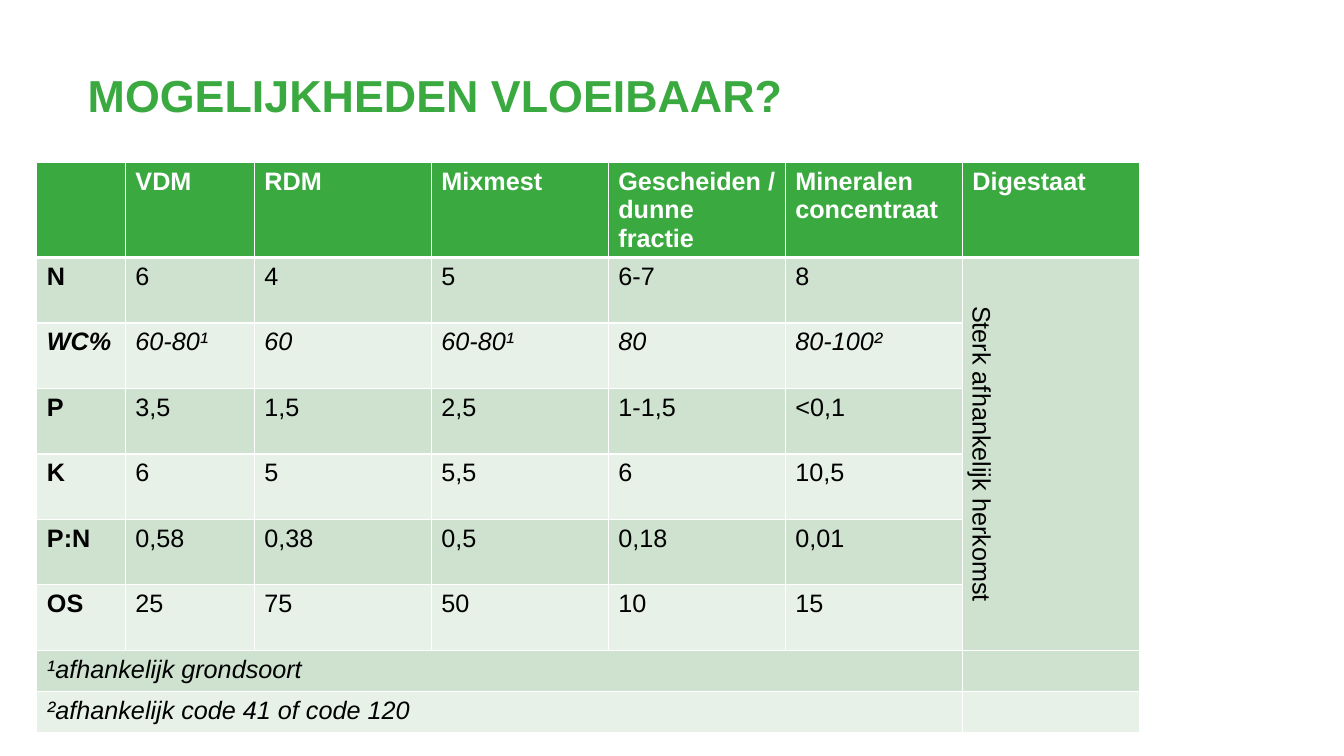
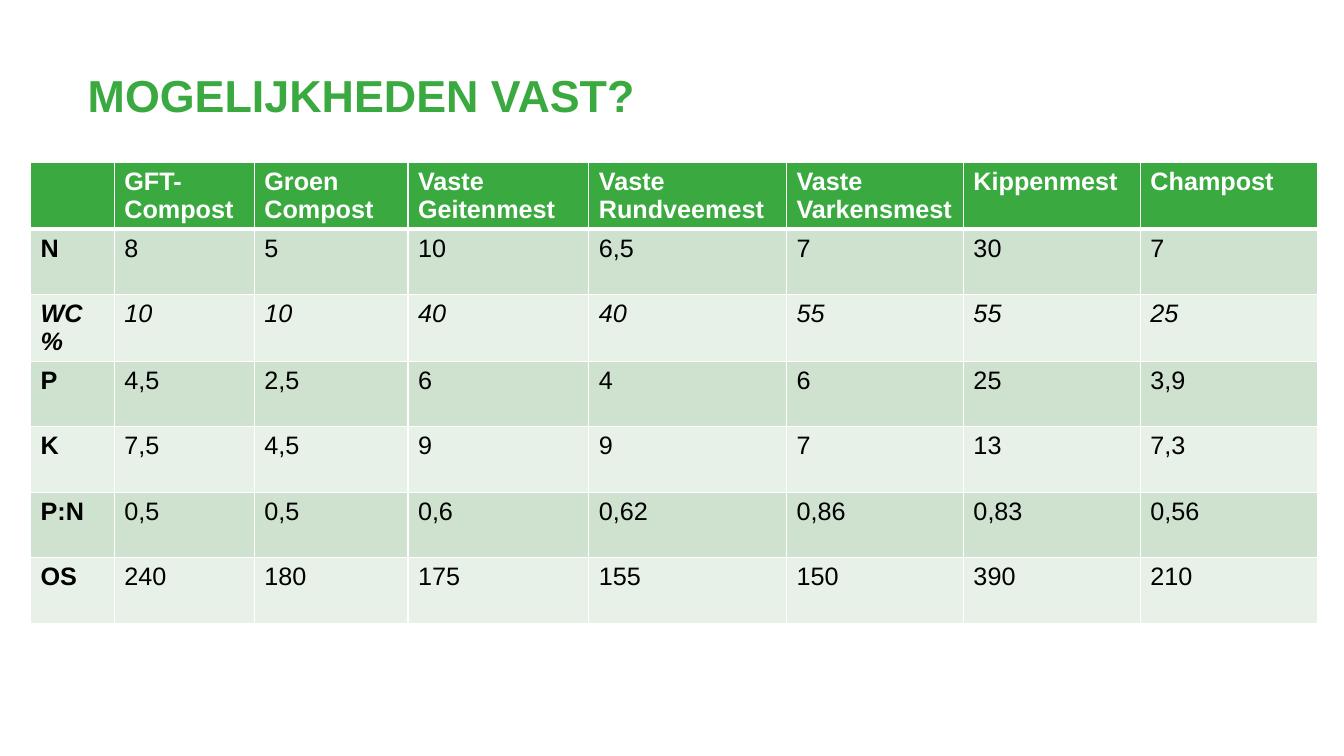
import pptx
import pptx.dml.color
import pptx.enum.text
import pptx.oxml
import pptx.oxml.ns
import pptx.util

Cm = pptx.util.Cm
Pt = pptx.util.Pt
ANCHOR = pptx.enum.text.MSO_ANCHOR
ALIGN = pptx.enum.text.PP_ALIGN

COLORS = {
    "green": "3AAA40",
    "band_dark": "CEE2CF",
    "band_light": "E8F1E8",
    "white": "FFFFFF",
    "black": "000000",
}
FONT = "Arial"
ROW_HEIGHT = 1.65
NOTE_HEIGHT = 0.89
WIDE_COLUMN = 4.46


class Deck:
    """Holds the presentation, its style and the current slide."""

    def __init__(self):
        self.presentation = pptx.Presentation()
        self.presentation.slide_width = Cm(33.87)
        self.presentation.slide_height = Cm(19.05)
        self.slide = None

    def add_slide(self, title, title_width):
        layout = self.presentation.slide_layouts[5]
        self.slide = self.presentation.slides.add_slide(layout)
        shape = self.slide.shapes.title
        shape.left, shape.top = Cm(2.21), Cm(1.96)
        shape.width, shape.height = Cm(title_width), Cm(1.83)
        frame = shape.text_frame
        frame.margin_left = frame.margin_right = 0
        frame.margin_top = frame.margin_bottom = 0
        frame.word_wrap = True
        frame.auto_size = pptx.enum.text.MSO_AUTO_SIZE.NONE
        frame.vertical_anchor = ANCHOR.TOP
        paragraph = frame.paragraphs[0]
        paragraph.alignment = ALIGN.LEFT
        paragraph.line_spacing = 0.8
        self.add_run(paragraph, title, 32, "green", bold=True)

    def add_run(self, paragraph, text, size, color, bold=False, italic=False):
        run = paragraph.add_run()
        run.text = text
        font = run.font
        font.name, font.size = FONT, Pt(size)
        font.bold, font.italic = bold, italic
        font.color.rgb = pptx.dml.color.RGBColor.from_string(COLORS[color])

    def add_table(self, left, column_widths, header, rows, notes=()):
        heights = [ROW_HEIGHT] * (1 + len(rows)) + [NOTE_HEIGHT] * len(notes)
        shape = self.slide.shapes.add_table(
            len(heights), len(column_widths), Cm(left), Cm(4.1),
            Cm(sum(column_widths)), Cm(sum(heights)))
        table = shape.table
        for column, width in zip(table.columns, column_widths):
            column.width = Cm(width)
        for row, height in zip(table.rows, heights):
            row.height = Cm(height)

        # Fills and borders
        for row_index in range(len(heights)):
            for column_index in range(len(column_widths)):
                self.style_cell(table.cell(row_index, column_index), row_index)

        # Header and values
        for column_index, text in enumerate(header):
            self.fill_cell(table.cell(0, column_index), text, "white", bold=True)
        for row_index, values in enumerate(rows, 1):
            for column_index, text in enumerate(values):
                self.fill_cell(table.cell(row_index, column_index), text,
                               bold=column_index == 0,
                               italic=values[0] == "WC%")

        # Notes across all columns but the last
        for row_index, text in enumerate(notes, 1 + len(rows)):
            cell = table.cell(row_index, 0)
            cell.merge(table.cell(row_index, len(column_widths) - 2))
            self.fill_cell(cell, text, italic=True)
            last_cell = table.cell(row_index, len(column_widths) - 1)
            last_cell.text_frame.paragraphs[0].font.size = Pt(18)
        return table

    def style_cell(self, cell, row_index):
        band = "band_dark" if row_index % 2 else "band_light"
        color = "green" if row_index == 0 else band
        cell.fill.solid()
        cell.fill.fore_color.rgb = pptx.dml.color.RGBColor.from_string(COLORS[color])
        widths = {
            "L": 1,
            "R": 1,
            "T": 3 if row_index == 1 else 1,
            "B": 3 if row_index == 0 else 1,
        }
        properties = cell._tc.get_or_add_tcPr()
        for position, (side, width) in enumerate(widths.items()):
            line = pptx.oxml.parse_xml(
                f'<a:ln{side} {pptx.oxml.ns.nsdecls("a")} w="{Pt(width)}">'
                f'<a:solidFill><a:srgbClr val="{COLORS["white"]}"/></a:solidFill>'
                f'</a:ln{side}>')
            properties.insert(position, line)

    def fill_cell(self, cell, text, color="black", bold=False, italic=False):
        frame = cell.text_frame
        for index, line in enumerate(text.split("\n")):
            paragraph = frame.add_paragraph() if index else frame.paragraphs[0]
            if line:
                self.add_run(paragraph, line, 18, color, bold, italic)

    def add_vertical_cell(self, table, column_index, last_row, text):
        cell = table.cell(1, column_index)
        cell.merge(table.cell(last_row, column_index))
        self.fill_cell(cell, text)
        cell.text_frame.paragraphs[0].alignment = ALIGN.CENTER
        cell.vertical_anchor = ANCHOR.MIDDLE
        cell._tc.get_or_add_tcPr().set("vert", "vert")


def main():
    deck = Deck()

    # Liquid manure
    deck.add_slide("MOGELIJKHEDEN VLOEIBAAR?", 30.58)
    liquid_rows = [
        ["N", "6", "4", "5", "6-7", "8"],
        ["WC%", "60-80¹", "60", "60-80¹", "80", "80-100²"],
        ["P", "3,5", "1,5", "2,5", "1-1,5", "<0,1"],
        ["K", "6", "5", "5,5", "6", "10,5"],
        ["P:N", "0,58", "0,38", "0,5", "0,18", "0,01"],
        ["OS", "25", "75", "50", "10", "15"],
    ]
    table = deck.add_table(
        0.93, [2.23, 3.25] + [WIDE_COLUMN] * 5,
        ["", "VDM", "RDM", "Mixmest", "Gescheiden /\ndunne fractie",
         "Mineralen\nconcentraat", "Digestaat"],
        liquid_rows,
        ["¹afhankelijk grondsoort", "²afhankelijk code 41 of code 120"])
    deck.add_vertical_cell(table, 6, len(liquid_rows), "Sterk afhankelijk herkomst")

    # Solid manure and compost
    deck.add_slide("MOGELIJKHEDEN VAST?", 25.4)
    deck.add_table(
        0.77, [2.11, 3.53, 3.87, 4.56, 4.98] + [WIDE_COLUMN] * 3,
        ["", "GFT-Compost", "Groen Compost", "Vaste Geitenmest",
         "Vaste Rundveemest", "Vaste Varkensmest", "Kippenmest", "Champost"],
        [
            ["N", "8", "5", "10", "6,5", "7", "30", "7"],
            ["WC%", "10", "10", "40", "40", "55", "55", "25"],
            ["P", "4,5", "2,5", "6", "4", "6", "25", "3,9"],
            ["K", "7,5", "4,5", "9", "9", "7", "13", "7,3"],
            ["P:N", "0,5", "0,5", "0,6", "0,62", "0,86", "0,83", "0,56"],
            ["OS", "240", "180", "175", "155", "150", "390", "210"],
        ])

    deck.presentation.save("out.pptx")


if __name__ == "__main__":
    main()
